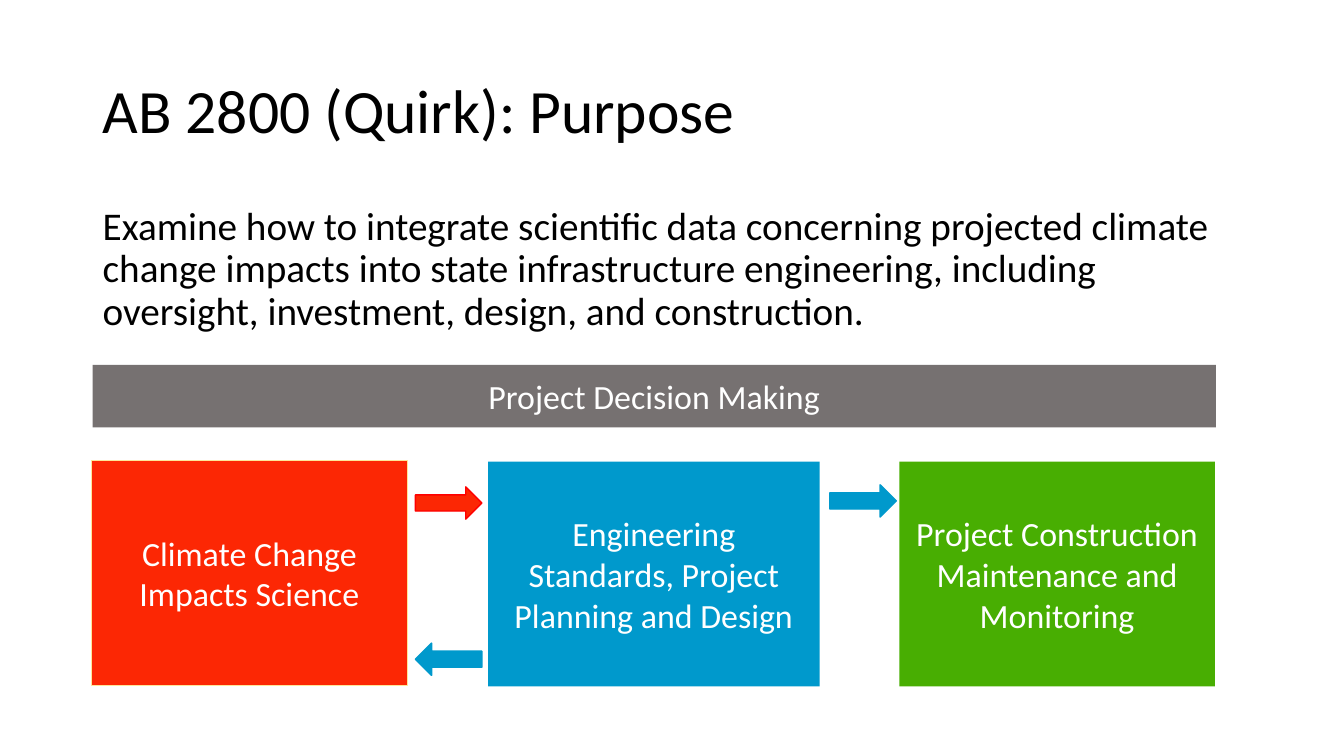
import dataclasses

import pptx
import pptx.dml.color
import pptx.enum.shapes
import pptx.enum.text
import pptx.util

Inches = pptx.util.Inches
Pt = pptx.util.Pt
Kind = pptx.enum.shapes.MSO_SHAPE
Align = pptx.enum.text.PP_ALIGN
Anchor = pptx.enum.text.MSO_ANCHOR


@dataclasses.dataclass(frozen=True)
class Theme:
    """Colours, font and type sizes of the slide."""
    font: str = "Calibri"
    ink: str = "000000"
    white: str = "FFFFFF"
    red: str = "FC2704"
    edge: str = "FF0000"
    cream: str = "FFE699"
    blue: str = "0099CC"
    green: str = "48AE02"
    gray: str = "767171"
    title: float = 44
    body: float = 28
    label: float = 24.2


THEME = Theme()


def color(code):
    """Turn a hex code into a colour."""
    return pptx.dml.color.RGBColor.from_string(code)


def write(shape, text, size, ink, align, anchor):
    """Set and format the text of a shape."""
    frame = shape.text_frame
    frame.word_wrap = True
    frame.vertical_anchor = anchor
    frame.text = text
    par = frame.paragraphs[0]
    par.alignment = align
    font = par.runs[0].font
    font.name = THEME.font
    font.size = Pt(size)
    font.color.rgb = color(ink)
    return par


def prose(slide, box, text, size, anchor, before=0):
    """Place a left-aligned text box."""
    shape = slide.shapes.add_textbox(*map(Inches, box))
    par = write(shape, text, size, THEME.ink, Align.LEFT, anchor)
    par.line_spacing = 0.9
    par.space_before = Pt(before)


def block(slide, kind, box, fill, line=None):
    """Place a filled shape with an optional outline."""
    shape = slide.shapes.add_shape(kind, *map(Inches, box))
    shape.shadow.inherit = False
    shape.fill.solid()
    shape.fill.fore_color.rgb = color(fill)
    if line:
        shape.line.color.rgb = color(line)
        shape.line.width = Pt(1)
    else:
        shape.line.fill.background()
    return shape


def panel(slide, box, text, fill, line=None):
    """Place a rectangle with a centred label."""
    shape = block(slide, Kind.RECTANGLE, box, fill, line)
    write(shape, text, THEME.label, THEME.white, Align.CENTER, Anchor.MIDDLE)


def header(slide, box):
    """Place the title and the purpose statement."""
    left, top, width, height = box
    prose(slide, (left, top, width, 1.45), "AB 2800 (Quirk): Purpose",
          THEME.title, Anchor.MIDDLE)
    prose(slide, (left, top + 1.6, width, height - 1.6),
          "Examine how to integrate scientific data concerning projected "
          "climate change impacts into state infrastructure engineering, "
          "including oversight, investment, design, and construction.",
          THEME.body, Anchor.TOP, 10)


def flow(slide, box):
    """Place the three stages, the bar above them and their arrows."""
    left, top, width, height = box
    tall = 2.23
    row = top + height - tall
    stages = (
        (0, -0.01, 3.13, "Climate Change Impacts Science",
         THEME.red, THEME.cream),
        (3.93, 0, 3.29, "Engineering Standards, Project Planning and Design",
         THEME.blue, None),
        (8.01, 0, 3.13, "Project Construction Maintenance and Monitoring",
         THEME.green, None),
    )
    for x, y, wide, text, fill, line in stages:
        panel(slide, (left + x, row + y, wide, tall), text, fill, line)
    panel(slide, (left + 0.01, top, width, 0.62),
          "Project Decision Making", THEME.gray)
    arrows = (
        (3.21, 0.25, 0, THEME.red, THEME.edge),
        (7.32, 0.23, 0, THEME.blue, THEME.blue),
        (3.21, 1.8, 180, THEME.blue, THEME.blue),
    )
    for x, y, turn, fill, line in arrows:
        arrow = block(slide, Kind.RIGHT_ARROW,
                      (left + x, row + y, 0.66, 0.32), fill, line)
        arrow.rotation = turn


def main():
    """Build and save the slide."""
    deck = pptx.Presentation()
    deck.slide_width = Inches(13.33)
    deck.slide_height = Inches(7.5)
    slide = deck.slides.add_slide(deck.slide_layouts[6])
    header(slide, (0.92, 0.4, 11.5, 6.74))
    flow(slide, (0.91, 3.62, 11.14, 3.19))
    deck.save("out.pptx")


if __name__ == "__main__":
    main()
